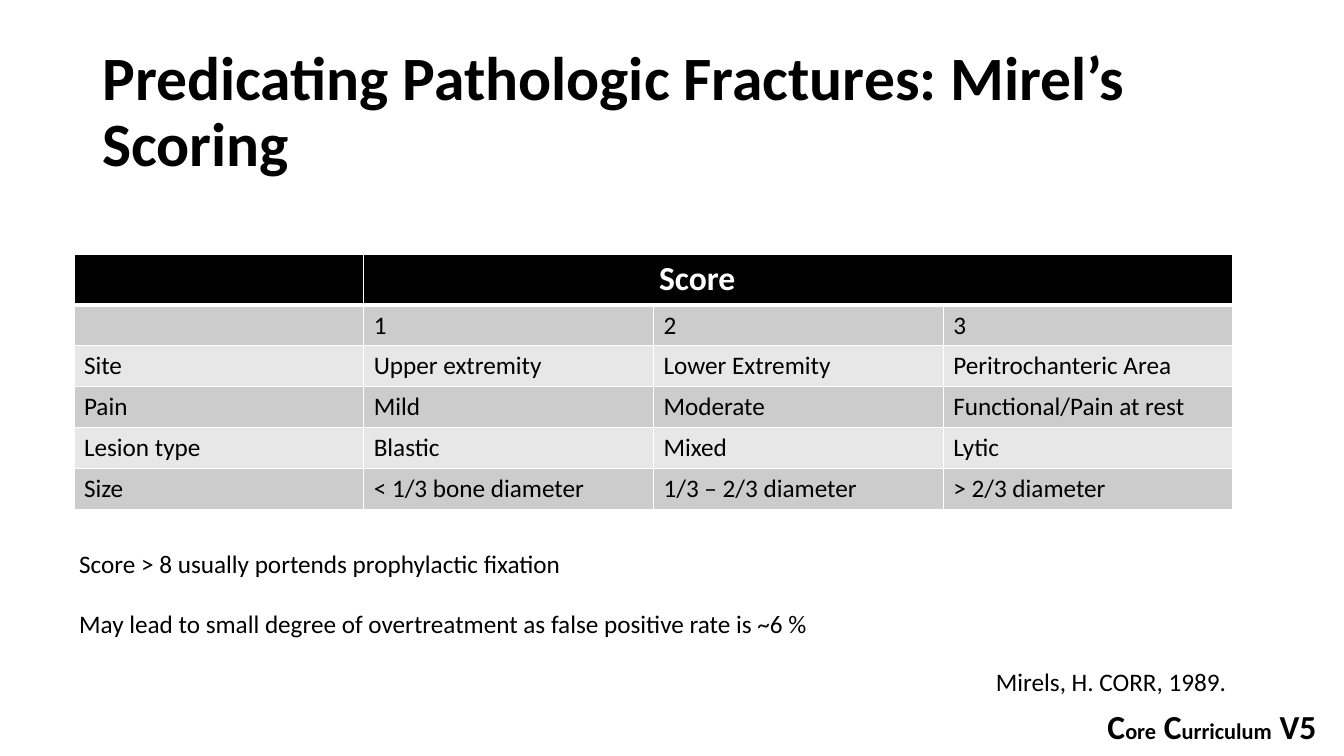
from lxml import etree
from pptx import Presentation
from pptx.dml.color import RGBColor
from pptx.enum import text
from pptx.oxml import ns
from pptx.util import Pt

COLORS = {"black": "000000", "white": "FFFFFF", "dark": "CCCCCC", "light": "E7E7E7"}
FONT = "Calibri"


def style(font, size, color="black", bold=False):
    font.name = FONT
    font.size = Pt(size)
    font.bold = bold
    font.color.rgb = RGBColor.from_string(COLORS[color])


def add_text(left, top, width, height, lines, size, bold=False):
    box = slide.shapes.add_textbox(Pt(left), Pt(top), Pt(width), Pt(height))
    frame = box.text_frame
    frame.word_wrap = True
    frame.text = "\n".join(lines)
    for paragraph in frame.paragraphs:
        style(paragraph.font, size, bold=bold)
    return frame


presentation = Presentation()
presentation.slide_width = Pt(960)
presentation.slide_height = Pt(540)
slide = presentation.slides.add_slide(presentation.slide_layouts[6])

# Footer in mock small capitals
footer = add_text(784, 501, 169, 36, [""], 24, bold=True).paragraphs[0]
for part, size in (("C", 24), ("ore", 16), (" C", 24), ("urriculum", 16), (" V5", 24)):
    run = footer.add_run()
    run.text = part
    run.font.size = Pt(size)

# Title
title = add_text(66, 28.75, 828, 104.4,
                 ["Predicating Pathologic Fractures: Mirel’s Scoring"], 44, bold=True)
title.vertical_anchor = text.MSO_ANCHOR.MIDDLE
title.paragraphs[0].line_spacing = 0.9

# Scoring table
rows = [
    ["", "Score", "", ""],
    ["", "1", "2", "3"],
    ["Site", "Upper extremity", "Lower Extremity", "Peritrochanteric Area"],
    ["Pain", "Mild", "Moderate", "Functional/Pain at rest"],
    ["Lesion type", "Blastic", "Mixed", "Lytic"],
    ["Size", "< 1/3 bone diameter", "1/3 – 2/3 diameter", "> 2/3 diameter"],
]
header_height, row_height, column_width = 36.5, 29.2, 207
table = slide.shapes.add_table(
    len(rows), 4, Pt(52.8), Pt(181.4), Pt(4 * column_width),
    Pt(header_height + 5 * row_height)).table
for column in table.columns:
    column.width = Pt(column_width)

for row_index, values in enumerate(rows):
    header = row_index == 0
    table.rows[row_index].height = Pt(header_height if header else row_height)
    fill = "black" if header else ("dark" if row_index % 2 else "light")
    for column_index, value in enumerate(values):
        cell = table.cell(row_index, column_index)
        cell.text = value
        style(cell.text_frame.paragraphs[0].font, 24 if header else 18,
              "white" if header else "black", bold=header)
        cell.fill.solid()
        cell.fill.fore_color.rgb = RGBColor.from_string(COLORS[fill])

        # White borders, thicker under the header
        properties = cell._tc.get_or_add_tcPr()
        for position, side in enumerate(("lnL", "lnR", "lnT", "lnB")):
            thick = (row_index, side) in ((0, "lnB"), (1, "lnT"))
            line = etree.Element(ns.qn("a:" + side), w=str(Pt(3 if thick else 1)))
            solid = etree.SubElement(line, ns.qn("a:solidFill"))
            etree.SubElement(solid, ns.qn("a:srgbClr"), val=COLORS["white"])
            properties.insert(position, line)

score = table.cell(0, 1)
score.merge(table.cell(0, 3))
score.margin_left = Pt(211)

# Conclusions and citation
conclusions = add_text(49.5, 388, 700, 72.7, [
    "Score > 8 usually portends prophylactic fixation",
    "May lead to small degree of overtreatment as false positive rate is ~6 %"], 18)
conclusions.paragraphs[1].space_before = Pt(21.5)
add_text(704.3, 472.3, 247, 29, ["Mirels, H. CORR, 1989."], 18)

presentation.save("out.pptx")
